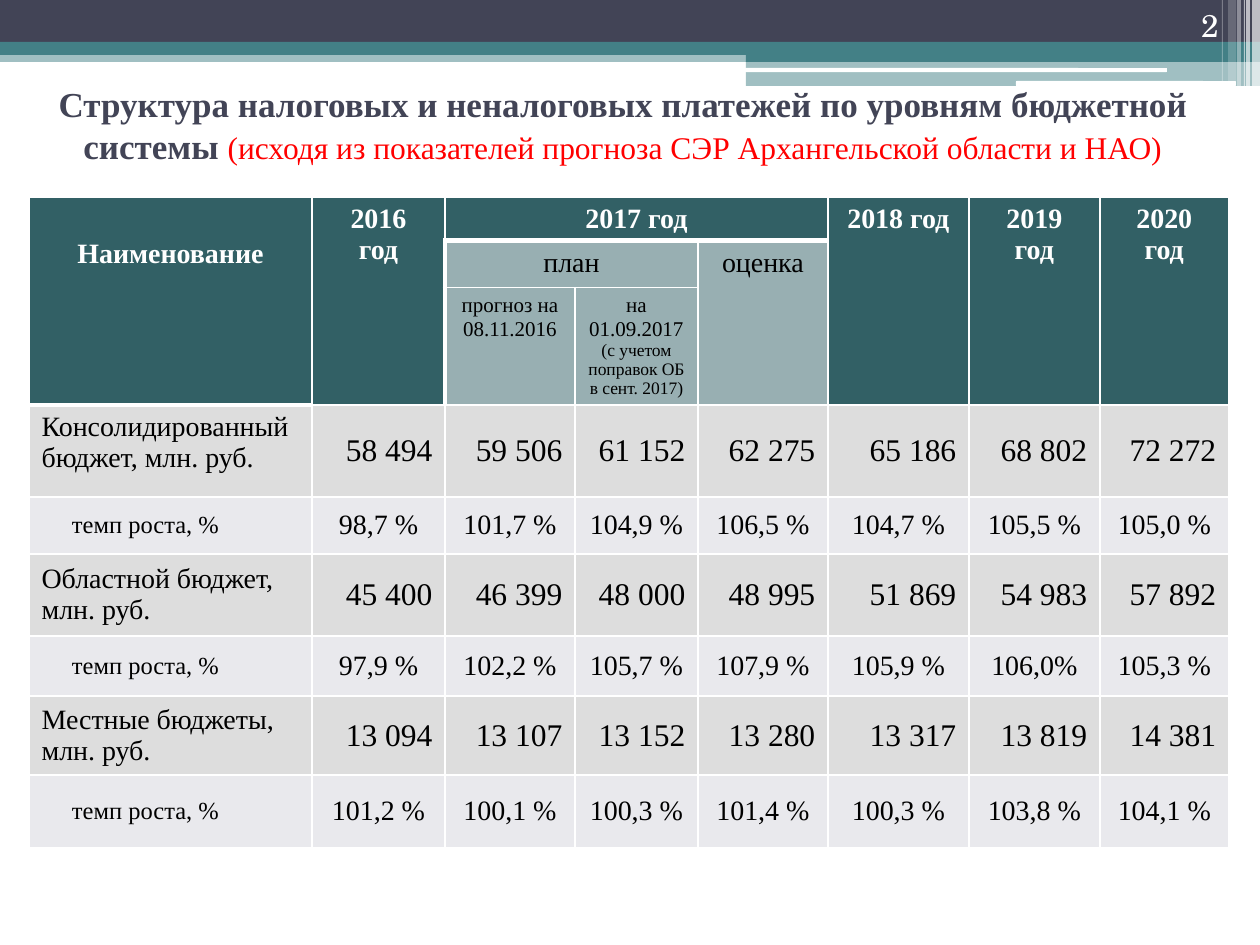
from lxml import etree
from pptx import Presentation
from pptx.dml.color import RGBColor
from pptx.enum.shapes import MSO_SHAPE
from pptx.enum.text import MSO_ANCHOR, MSO_AUTO_SIZE, PP_ALIGN
from pptx.oxml.ns import qn
from pptx.util import Emu, Pt

RECT, ROUND = MSO_SHAPE.RECTANGLE, MSO_SHAPE.ROUNDED_RECTANGLE
LEFT, CENTER, RIGHT = PP_ALIGN.LEFT, PP_ALIGN.CENTER, PP_ALIGN.RIGHT
TOP, MIDDLE, BOTTOM = MSO_ANCHOR.TOP, MSO_ANCHOR.MIDDLE, MSO_ANCHOR.BOTTOM
SCALE = 914400 / 126
SERIF = "Times New Roman"
WHITE, BLACK, RED = "FFFFFF", "000000", "FF0000"
NAVY, TEAL = "424456", "438086"
HEAD, SUBHEAD = "326065", "98AFB2"
BUDGET, GROWTH = "DDDDDD", "E9E9ED"

COLS = [283, 133, 130, 123, 130, 141, 131, 129]
ROWS = [43, 47, 117, 92, 57, 82, 60, 79, 73]
HEADERS = [
    (0, 0, 2, 0, "Наименование"),
    (0, 1, 2, 1, "2016\vгод"),
    (0, 2, 0, 4, "2017 год"),
    (0, 5, 2, 5, "2018 год"),
    (0, 6, 2, 6, "2019\vгод"),
    (0, 7, 2, 7, "2020\vгод"),
]
SUBHEADERS = [
    (1, 2, 1, 3, 16, [("план", {})]),
    (1, 4, 2, 4, 16, [("оценка", {})]),
    (2, 2, 2, 2, 12, [("прогноз на 08.11.2016", {})]),
    (2, 3, 2, 3, 12, [("на 01.09.2017 ", {}),
                      ("(с учетом поправок ОБ в сент. 2017)", {"size": 10})]),
]
BUDGETS = [
    ("Консолидированный бюджет, млн. руб.",
     ["58 494", "59 506", "61 152", "62 275", "65 186", "68 802", "72 272"],
     ["98,7 %", "101,7 %", "104,9 %", "106,5 %", "104,7 %", "105,5 %", "105,0 %"]),
    ("Областной бюджет, млн. руб.",
     ["45 400", "46 399", "48 000", "48 995", "51 869", "54 983", "57 892"],
     ["97,9 %", "102,2 %", "105,7 %", "107,9 %", "105,9 %", "106,0%", "105,3 %"]),
    ("Местные бюджеты, млн. руб.",
     ["13 094", "13 107", "13 152", "13 280", "13 317", "13 819", "14 381"],
     ["101,2 %", "100,1 %", "100,3 %", "101,4 %", "100,3 %", "103,8 %", "104,1 %"]),
]
THICK = ({(0, c, "B") for c in (2, 3, 4)} | {(1, c, "T") for c in (2, 3, 4)}
         | {(r, 2, "L") for r in (1, 2)} | {(r, 1, "R") for r in (1, 2)}
         | {(2, 0, "B"), (3, 0, "T")})


def px(n):
    return Emu(round(n * SCALE))


def rgb(color):
    return RGBColor.from_string(color)


def write(tf, runs, size=16, color=BLACK, bold=False, font=SERIF, align=CENTER):
    p = tf.paragraphs[0]
    p.alignment = align
    for text, changes in runs:
        style = {"size": size, "color": color, "bold": bold, **changes}
        for i, line in enumerate(text.split("\v")):
            if i:
                p.add_line_break()
            r = p.add_run()
            r.text = line
            r.font.name = font
            r.font.size = Pt(style["size"])
            r.font.bold = style["bold"]
            r.font.color.rgb = rgb(style["color"])
    return p


def bar(s, x, y, w, h, color, alpha=100, kind=RECT):
    sp = s.shapes.add_shape(kind, px(x), px(y), px(w), px(h))
    sp.shadow.inherit = False
    sp.fill.solid()
    sp.fill.fore_color.rgb = rgb(color)
    sp.line.fill.background()
    if alpha < 100:
        clr = sp.fill._xPr.find(".//" + qn("a:srgbClr"))
        etree.SubElement(clr, qn("a:alpha"), val=str(alpha * 1000))


def add_header(s, x, y, w):
    right = x + w
    bar(s, x, y + 50, w, 12, TEAL, 50)
    bar(s, x, y, w, 43, NAVY)
    bar(s, x, y + 42, w, 13, TEAL)
    bar(s, right - 514, y + 49, 514, 13, TEAL)
    bar(s, right - 514, y + 61, 514, 25, TEAL, 50)
    bar(s, right - 515, y + 68, 422, 4, WHITE, kind=ROUND)
    bar(s, right - 244, y + 81, 220, 5, WHITE, kind=ROUND)
    for offset, width, height, alpha in [(8, 8, 86, 65), (14, 4, 86, 65), (16, 1, 86, 60),
                                         (23, 4, 86, 40), (32, 8, 81, 20), (38, 1, 81, 30)]:
        bar(s, right - offset, y, width, height, WHITE, alpha)


def add_title(s, x, y, w, h):
    sp = s.shapes.title
    sp.left, sp.top, sp.width, sp.height = px(x), px(y), px(w), px(h)
    tf = sp.text_frame
    tf.word_wrap = True
    tf.auto_size = MSO_AUTO_SIZE.NONE
    tf.vertical_anchor = MIDDLE
    write(tf, [("Структура налоговых и неналоговых платежей по уровням бюджетной системы ", {}),
               ("(исходя из показателей прогноза СЭР Архангельской области и НАО)",
                {"size": 18, "color": RED, "bold": False})],
          size=20, color=NAVY, bold=True)


def add_page_number(s, x, y, w, h):
    tf = s.shapes.add_textbox(px(x), px(y), px(w), px(h)).text_frame
    tf.word_wrap = True
    tf.vertical_anchor = BOTTOM
    write(tf, [("2", {})], size=18, color=WHITE, font="TeX Gyre Schola", align=RIGHT)


def set_borders(cell, row, col):
    tcPr = cell._tc.get_or_add_tcPr()
    for side in "LRTB":
        width = 3 if (row, col, side) in THICK else 1
        ln = etree.SubElement(tcPr, qn("a:ln" + side), w=str(Pt(width)))
        fill = etree.SubElement(ln, qn("a:solidFill"))
        etree.SubElement(fill, qn("a:srgbClr"), val=WHITE)


def fill_cell(cell, fill, runs, anchor=MIDDLE, **style):
    cell.fill.solid()
    cell.fill.fore_color.rgb = rgb(fill)
    cell.vertical_anchor = anchor
    return write(cell.text_frame, runs, **style)


def add_budget_table(s, x, y):
    frame = s.shapes.add_table(len(ROWS), len(COLS), px(x), px(y), px(sum(COLS)), px(sum(ROWS)))
    tbl = frame.table
    tbl.first_row = tbl.horz_banding = False
    for column, width in zip(tbl.columns, COLS):
        column.width = px(width)
    for row, height in zip(tbl.rows, ROWS):
        row.height = px(height)
    for r in range(len(ROWS)):
        for c in range(len(COLS)):
            set_borders(tbl.cell(r, c), r, c)

    for r, c, r2, c2, text in HEADERS:
        tbl.cell(r, c).merge(tbl.cell(r2, c2))
        fill_cell(tbl.cell(r, c), HEAD, [(text, {})], TOP, color=WHITE, bold=True)
    tbl.cell(0, 0).margin_top = px(42)
    for r, c, r2, c2, size, runs in SUBHEADERS:
        if (r, c) != (r2, c2):
            tbl.cell(r, c).merge(tbl.cell(r2, c2))
        fill_cell(tbl.cell(r, c), SUBHEAD, runs, TOP, size=size)

    for i, (name, amounts, rates) in enumerate(BUDGETS):
        r = 3 + 2 * i
        fill_cell(tbl.cell(r, 0), BUDGET, [(name, {})], MIDDLE if i else TOP, align=LEFT)
        fill_cell(tbl.cell(r + 1, 0), GROWTH, [("темп роста, %", {})], size=14, align=LEFT)
        tbl.cell(r + 1, 0).margin_left = px(43)
        for c, (amount, rate) in enumerate(zip(amounts, rates), 1):
            fill_cell(tbl.cell(r, c), BUDGET, [(amount, {})], size=18, align=RIGHT)
            fill_cell(tbl.cell(r + 1, c), GROWTH, [(rate, {})])


def main():
    prs = Presentation()
    prs.slide_width, prs.slide_height = px(1260), px(945)
    s = prs.slides.add_slide(prs.slide_layouts[5])
    add_header(s, 0, 0, 1260)
    add_title(s, 25, 35, 1196, 179)
    add_budget_table(s, 29, 197)
    add_page_number(s, 1126, 0, 105, 50)
    prs.save("out.pptx")


if __name__ == "__main__":
    main()
